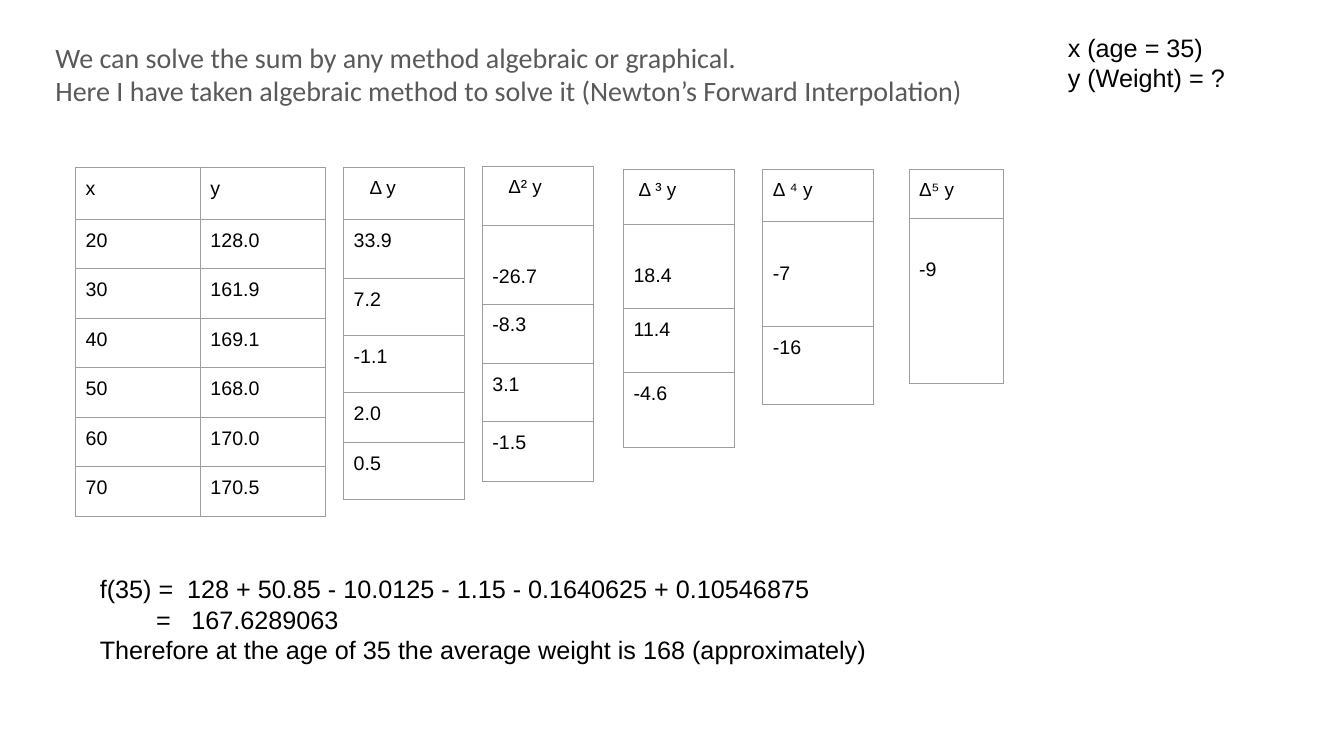
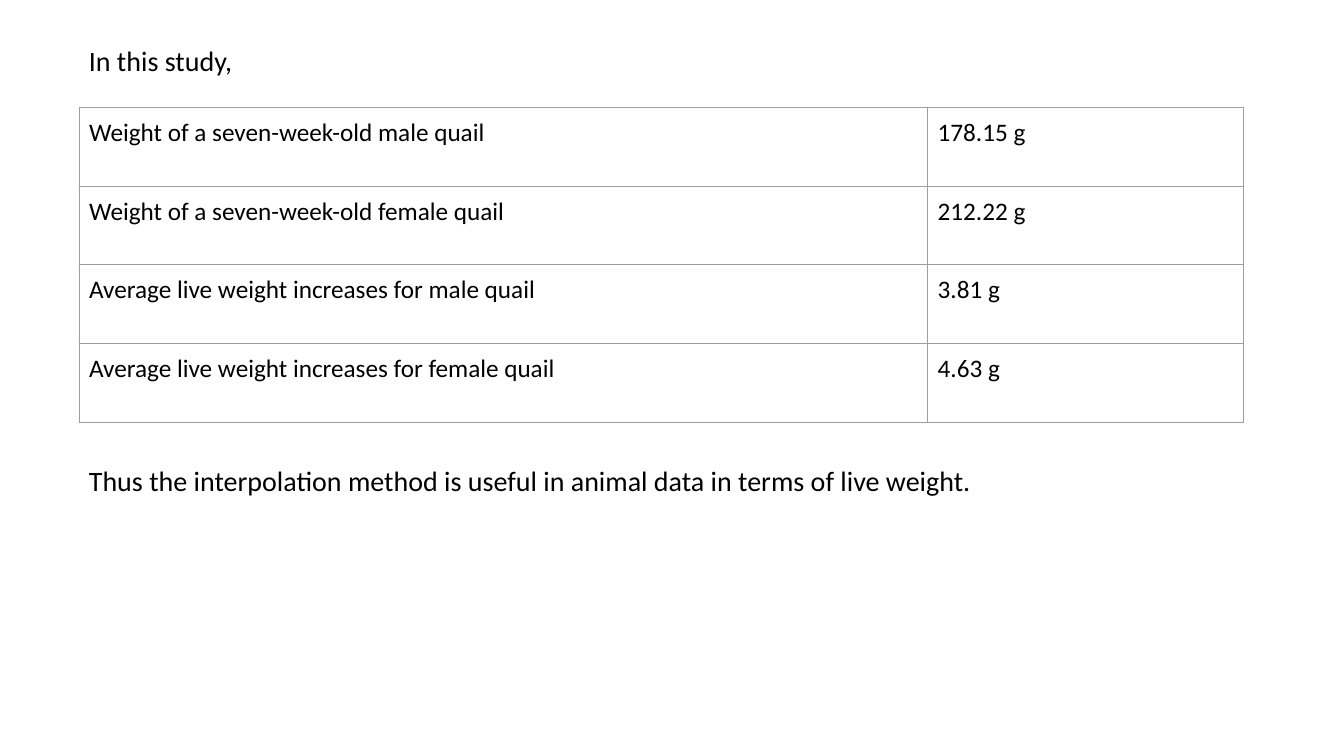
from lxml.etree import SubElement
from pptx import Presentation
from pptx.dml.color import RGBColor as RGB
from pptx.oxml import parse_xml
from pptx.oxml.ns import nsdecls, qn
from pptx.util import Inches, Pt

# Theme: colours, fonts and type sizes
THEME = {
    "ink": RGB.from_string("000000"),
    "grey": RGB.from_string("595959"),
    "rule": "9E9E9E",
    "rule_width": Pt(0.75),
    "lead": {"name": "Calibri", "size": Pt(20)},
    "body": {"name": "Calibri", "size": Pt(18)},
    "math": {"name": "Arial", "size": Pt(18)},
    "cell": {"name": "Arial", "size": Pt(14)},
    "head": {"name": "Arial", "size": Pt(13.5)},
}

prs = Presentation()
prs.slide_width, prs.slide_height = Inches(13.33), Inches(7.5)
UNIT = prs.slide_height / 90  # the slide is a grid of 160 columns by 90 rows
PAD = 1.2  # cell padding, in grid units


def write(tf, lines, style, color="ink", tabs=()):
    """Fill a text frame, one paragraph a line; tabs holds stops for each line."""
    for i, line in enumerate(lines):
        p = tf.paragraphs[0] if i == 0 else tf.add_paragraph()
        if tabs and tabs[i]:
            stops = SubElement(p._p.get_or_add_pPr(), qn("a:tabLst"))
            for stop in tabs[i]:
                SubElement(stops, qn("a:tab"), pos=str(int(stop * UNIT)), algn="l")
        r = p.add_run()
        r.text = line
        for key, value in THEME[style].items():
            setattr(r.font, key, value)
        r.font.color.rgb = THEME[color]


def add_grid(s, x, y, widths, heights, rows, styles, indent=0, drop=0):
    """Ruled table; indent moves the first row right, drop the second row down."""
    box = [int(n * UNIT) for n in (x, y, sum(widths), sum(heights))]
    table = s.shapes.add_table(len(rows), len(widths), *box).table
    table.first_row = table.horz_banding = False
    for col, width in zip(table.columns, widths):
        col.width = int(width * UNIT)
    for i, (row, height, texts) in enumerate(zip(table.rows, heights, rows)):
        row.height = int(height * UNIT)
        for cell, text in zip(row.cells, texts):
            margins = {
                "left": PAD + (indent if i == 0 else 0),
                "top": PAD + (drop if i == 1 else 0),
                "right": PAD,
                "bottom": PAD,
            }
            for side, gap in margins.items():
                setattr(cell, f"margin_{side}", int(gap * UNIT))
            cell.fill.background()
            for n, side in enumerate("LRTB"):
                cell._tc.tcPr.insert(n, parse_xml(
                    f'<a:ln{side} {nsdecls("a")} w="{THEME["rule_width"]}"><a:solidFill>'
                    f'<a:srgbClr val="{THEME["rule"]}"/></a:solidFill></a:ln{side}>'))
            write(cell.text_frame, [text], styles[min(i, 1)])


# Tables of each slide: x, y, column widths, row heights, rows, styles, indent, drop
weights = [("x", "y"), ("20", "128.0"), ("30", "161.9"), ("40", "169.1"),
           ("50", "168.0"), ("60", "170.0"), ("70", "170.5")]
difference_tables = [(9, 19.9, [14.85] * 2, [6.2] + [5.9] * 6, weights, ("cell", "cell"))]

DROP = 3.65  # one blank line above the first value
for x, y, width, heights, column, indent, drop in [
    (40.9, 19.9, 14.4, [6.2, 7.1, 6.8, 6.7, 6, 6.8],
     ["Δ y", "33.9", "7.2", "-1.1", "2.0", "0.5"], 1.9, 0),
    (57.4, 19.8, 13.2, [7, 9.4, 7.1, 6.9, 7.1],
     ["Δ² y", "-26.7", "-8.3", "3.1", "-1.5"], 1.9, DROP),
    (74.2, 20.2, 13.2, [6.5, 10, 7.7, 8.9],
     ["Δ ³ y", "18.4", "11.4", "-4.6"], 0.6, DROP),
    (90.8, 20.2, 13.2, [6.2, 12.5, 9.2], ["Δ ⁴ y", "-7", "-16"], 0, DROP),
    (108.2, 20.2, 11.2, [5.8, 19.6], ["Δ⁵ y", "-9"], 0, DROP),
]:
    rows = [(text,) for text in column]
    difference_tables.append((x, y, [width], heights, rows, ("head", "cell"), indent, drop))

quail = [
    ("Weight of a seven-week-old male quail", "178.15 g"),
    ("Weight of a seven-week-old female quail", "212.22 g"),
    ("Average live weight increases for male quail", "3.81 g"),
    ("Average live weight increases for female quail", "4.63 g"),
]
quail_tables = [(9.4, 12.8, [101, 37.6], [9.36] * 4, quail, ("body", "body"))]

# Texts of each slide: box, lines, style, colour, tab stops
method_texts = [
    ((5.4, 4.2, 149.2, 16.9),
     ["We can solve the sum by any method algebraic or graphical.",
      "Here I have taken algebraic method to solve it (Newton’s Forward Interpolation)"],
     "lead", "grey"),
    ((125.9, 3.2, 24.1, 15.7), ["x (age = 35)", "y (Weight) = ?"], "math"),
    ((10.7, 67.7, 134.2, 19.4),
     ["f(35) =\t128 + 50.85 - 10.0125 - 1.15 - 0.1640625 + 0.10546875",
      "\t=\t167.6289063",
      "Therefore at the age of 35 the average weight is 168 (approximately)"],
     "math", "ink", [(10.4,), (6.7, 10.9), ()]),
]
study_texts = [
    ((9.4, 4.6, 80, 13.3), ["In this study,"], "lead"),
    ((9.4, 54.6, 136.8, 13.3),
     ["Thus the interpolation method is useful in animal data in terms of live weight."],
     "lead"),
]

# Build the slides
for texts, tables in [(method_texts, difference_tables), (study_texts, quail_tables)]:
    s = prs.slides.add_slide(prs.slide_layouts[6])
    for box, *content in texts:
        tf = s.shapes.add_textbox(*[int(n * UNIT) for n in box]).text_frame
        tf.word_wrap = True
        write(tf, *content)
    for spec_row in tables:
        add_grid(s, *spec_row)

prs.save("out.pptx")
